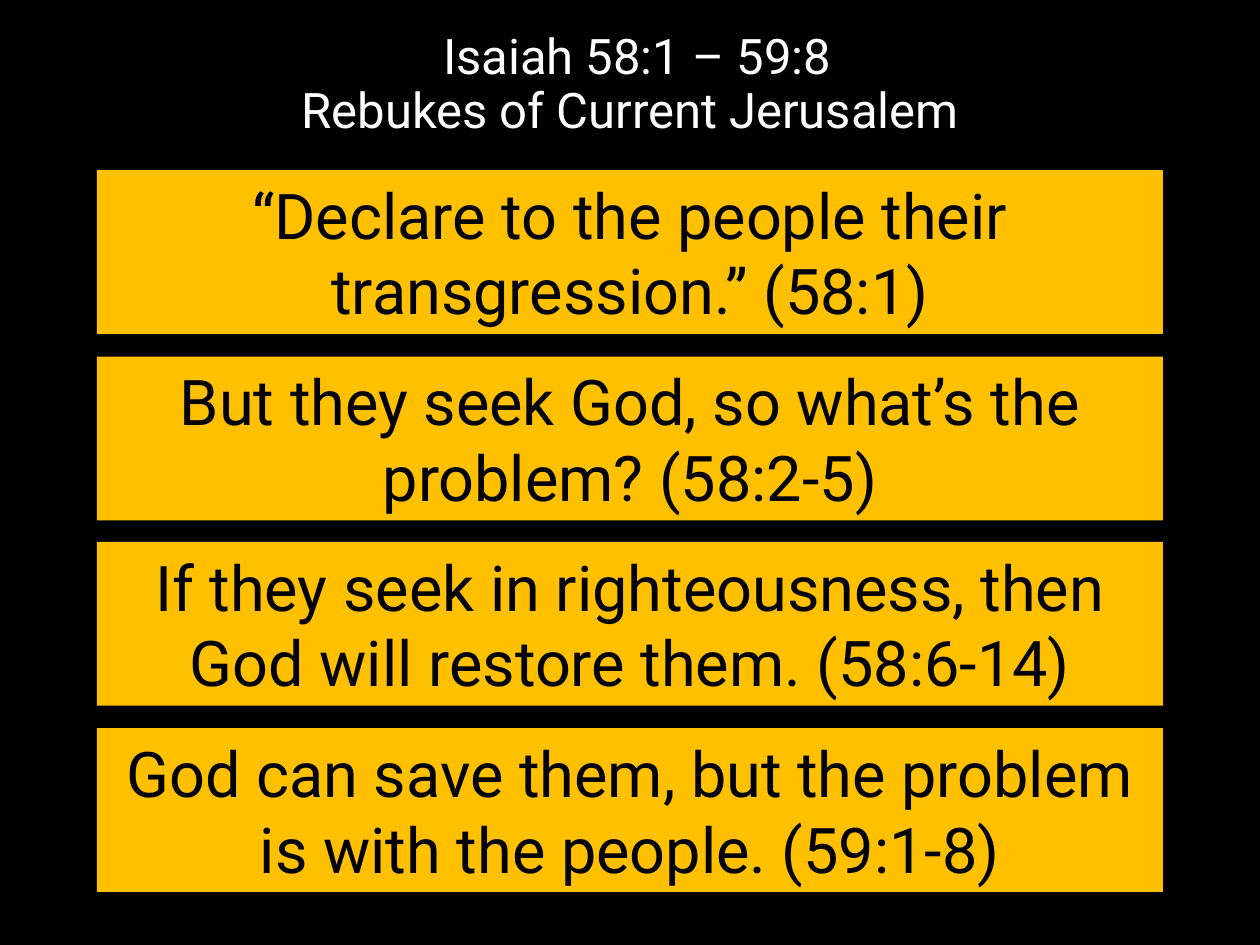
import pptx
import pptx.util
import pptx.dml.color
import pptx.enum.shapes
import pptx.enum.text
import pptx.oxml.ns
import lxml.etree

Inches = pptx.util.Inches
HUES = {"back": "000000", "bar": "FFC000", "title": "FFFFFF", "text": "000000"}


def rgb(name):
    return pptx.dml.color.RGBColor.from_string(HUES[name])


def write(shape, text, size=36, hue="text", space=None):
    """Add centred text to the first paragraph; a newline is a line break."""
    frame = shape.text_frame
    frame.word_wrap = True
    frame.vertical_anchor = pptx.enum.text.MSO_ANCHOR.MIDDLE
    para = frame.paragraphs[0]
    para.alignment = pptx.enum.text.PP_ALIGN.CENTER
    para.line_spacing = space
    for row, line in enumerate(text.split("\n")):
        if row:
            para.add_line_break()
            # Keep the break at the size of its text
            mark = lxml.etree.SubElement(para._p[-1], pptx.oxml.ns.qn("a:rPr"))
            mark.set("sz", str(size * 100))
        run = para.add_run()
        run.text = line
        run.font.size = pptx.util.Pt(size)
        run.font.name = "Roboto"
        run.font.color.rgb = rgb(hue)


deck = pptx.Presentation()
deck.slide_width, deck.slide_height = Inches(10), Inches(7.5)
slide = deck.slides.add_slide(deck.slide_layouts[5])
slide.background.fill.solid()
slide.background.fill.fore_color.rgb = rgb("back")

# Title, with a wider space ahead of its first line
title = slide.shapes.title
title.left, title.top = Inches(0.69), Inches(0.14)
title.width, title.height = Inches(8.62), Inches(1.03)
write(title, " ", size=32, hue="title", space=0.9)
write(title, "Isaiah 58:1 – 59:8\nRebukes of Current Jerusalem",
      size=28, hue="title", space=0.9)

# Stack of evenly spaced bars
points = [
    "“Declare to the people their transgression.” (58:1)",
    "But they seek God, so what’s the problem? (58:2-5)",
    "If they seek in righteousness, then God will restore them. (58:6-14)",
    "God can save them, but the problem is with the people. (59:1-8)",
]
top, step = 1.35, 1.477
for row, point in enumerate(points):
    bar = slide.shapes.add_shape(
        pptx.enum.shapes.MSO_SHAPE.RECTANGLE,
        Inches(0.77), Inches(round(top + row * step, 2)),
        Inches(8.46), Inches(1.3))
    bar.shadow.inherit = False
    bar.fill.solid()
    bar.fill.fore_color.rgb = rgb("bar")
    bar.line.fill.background()
    write(bar, point)

deck.save("out.pptx")
